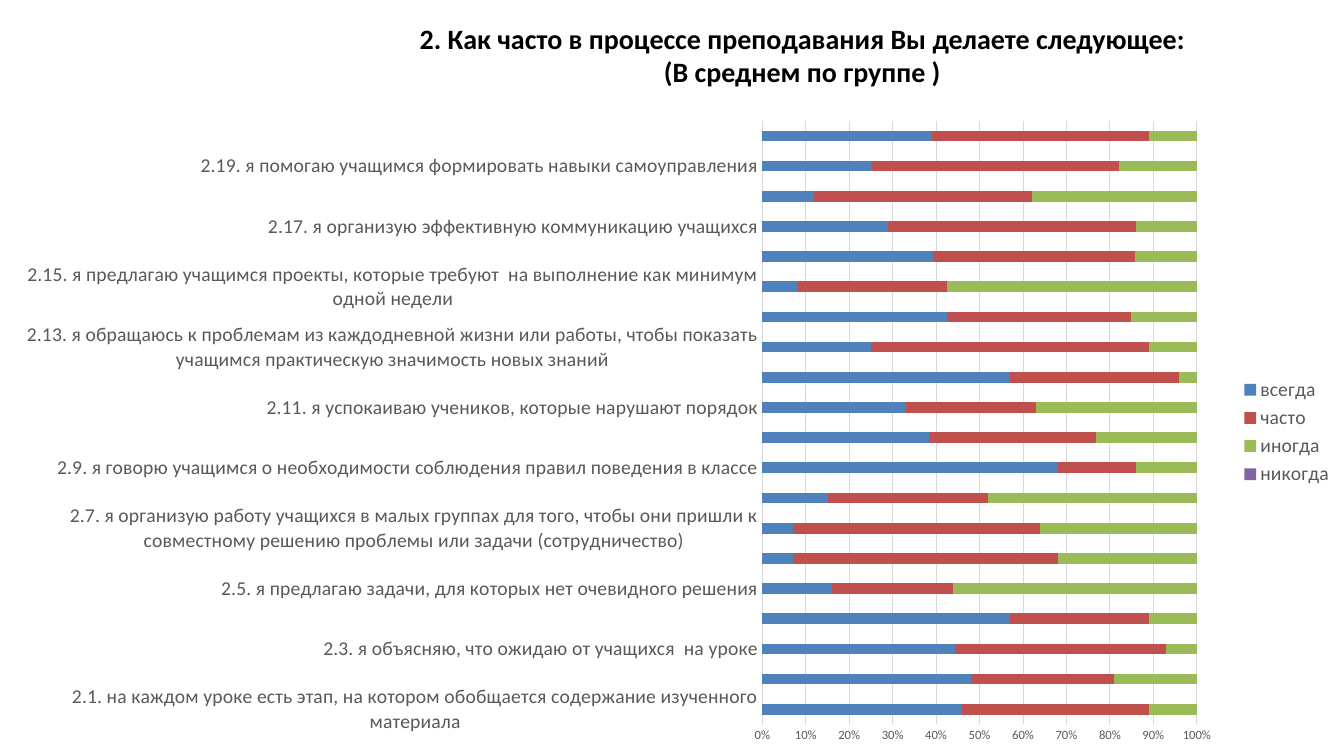
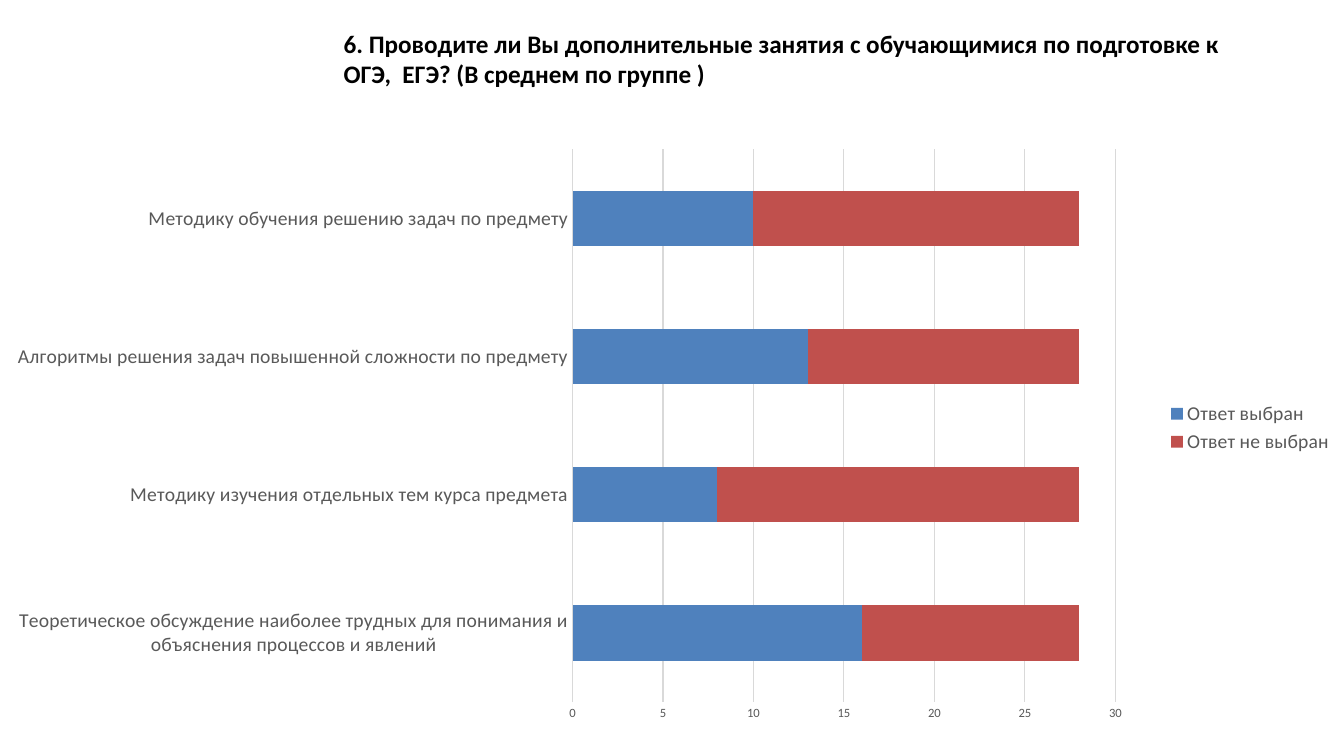
from pptx import Presentation
from pptx.chart.data import CategoryChartData
from pptx.dml.color import RGBColor
from pptx.enum.chart import XL_CHART_TYPE, XL_LEGEND_POSITION, XL_TICK_MARK
from pptx.enum.text import MSO_AUTO_SIZE, PP_ALIGN
from pptx.oxml import parse_xml
from pptx.oxml.ns import nsdecls, qn
from pptx.util import Cm, Pt

FONT = "Calibri"
COLOURS = {"title": "000000", "label": "595959", "grid": "D9D9D9"}
SERIES_COLOURS = ["4F81BD", "C0504D", "9BBB59", "8064A2"]
SLIDE_WIDTH, SLIDE_HEIGHT = 33.87, 19.05
TITLE_LEFT = 8.41

FREQUENCY_ROWS = [
    ("2.1. на каждом уроке есть этап, на котором обобщается содержание изученного материала", 46, 43, 11, 0),
    ("", 48, 33, 19, 0),
    ("2.3. я объясняю, что ожидаю от учащихся  на уроке", 44, 48, 7, 0),
    ("", 57, 32, 11, 0),
    ("2.5. я предлагаю задачи, для которых нет очевидного решения", 16, 28, 56, 0),
    ("", 7, 61, 32, 0),
    ("2.7. я организую работу учащихся в малых группах для того, чтобы они пришли к "
     "совместному решению проблемы или задачи (сотрудничество)", 7, 57, 36, 0),
    ("", 15, 37, 48, 0),
    ("2.9. я говорю учащимся о необходимости соблюдения правил поведения в классе", 68, 18, 14, 0),
    ("", 38, 38, 23, 0),
    ("2.11. я успокаиваю учеников, которые нарушают порядок", 33, 30, 37, 0),
    ("", 57, 39, 4, 0),
    ("2.13. я обращаюсь к проблемам из каждодневной жизни или работы, чтобы показать "
     "учащимся практическую значимость новых знаний", 25, 64, 11, 0),
    ("", 42, 42, 15, 0),
    ("2.15. я предлагаю учащимся проекты, которые требуют  на выполнение как минимум "
     "одной недели", 8, 35, 58, 0),
    ("", 39, 46, 14, 0),
    ("2.17. я организую эффективную коммуникацию учащихся", 29, 57, 14, 0),
    ("", 12, 50, 38, 0),
    ("2.19. я помогаю учащимся формировать навыки самоуправления", 25, 57, 18, 0),
    ("", 39, 50, 11, 0),
]

EXAM_ROWS = [
    ("Теоретическое обсуждение наиболее трудных для понимания и объяснения процессов и явлений", 16, 12),
    ("Методику изучения отдельных тем курса предмета", 8, 20),
    ("Алгоритмы решения задач повышенной сложности по предмету", 13, 15),
    ("Методику обучения решению задач по предмету", 10, 18),
]

SLIDES = [
    {
        "title": "2. Как часто в процессе преподавания Вы делаете следующее:\n(В среднем по группе )",
        "title_box": (0.41, 23.62, 1.96),
        "title_size": 20,
        "alignment": PP_ALIGN.CENTER,
        "chart_top": 2.72,
        "chart_type": XL_CHART_TYPE.BAR_STACKED_100,
        "series": ["всегда", "часто", "иногда", "никогда"],
        "rows": FREQUENCY_ROWS,
        "gap": 182,
        "axis_format": "0%",
        "plot": None,
    },
    {
        "title": "6. Проводите ли Вы дополнительные занятия с обучающимися по подготовке к ОГЭ,  ЕГЭ? "
                 "(В среднем по группе )",
        "title_box": (0.58, 22.63, 2.64),
        "title_size": 18,
        "alignment": PP_ALIGN.LEFT,
        "chart_top": 2.51,
        "chart_type": XL_CHART_TYPE.BAR_STACKED,
        "series": ["Ответ выбран", "Ответ не выбран"],
        "rows": EXAM_ROWS,
        "gap": 150,
        "axis_format": "General",
        "plot": {"x": 0.426, "y": 0.076, "w": 0.404, "h": 0.842},
    },
]


def style_font(font, size, colour, bold=False):
    font.name = FONT
    font.size = Pt(size)
    font.bold = bold
    font.color.rgb = RGBColor.from_string(COLOURS[colour])


def style_line(line):
    line.color.rgb = RGBColor.from_string(COLOURS["grid"])
    line.width = Pt(0.75)


def add_title(slide, content):
    top, width, height = content["title_box"]
    shape = slide.shapes.add_textbox(Cm(TITLE_LEFT), Cm(top), Cm(width), Cm(height))
    text_frame = shape.text_frame
    text_frame.word_wrap = True
    text_frame.auto_size = MSO_AUTO_SIZE.SHAPE_TO_FIT_TEXT
    text_frame.text = content["title"]
    for paragraph in text_frame.paragraphs:
        paragraph.alignment = content["alignment"]
        for run in paragraph.runs:
            style_font(run.font, content["title_size"], "title", True)


def place_plot(chart, plot):
    plot_area = chart.plots[0]._element.getparent()
    for layout in plot_area.findall(qn("c:layout")):
        plot_area.remove(layout)
    sizes = "".join(f'<c:{name} val="{value}"/>' for name, value in plot.items())
    plot_area.insert(0, parse_xml(
        f'<c:layout {nsdecls("c")}><c:manualLayout><c:layoutTarget val="inner"/>'
        f'<c:xMode val="edge"/><c:yMode val="edge"/>{sizes}</c:manualLayout></c:layout>'
    ))


def add_bar_chart(slide, content):
    labels, *columns = zip(*content["rows"])
    chart_data = CategoryChartData()
    chart_data.categories = labels
    for name, values in zip(content["series"], columns):
        chart_data.add_series(name, values)
    top = content["chart_top"]
    chart = slide.shapes.add_chart(
        content["chart_type"], Cm(0), Cm(top), Cm(SLIDE_WIDTH), Cm(SLIDE_HEIGHT - top), chart_data
    ).chart
    style_font(chart.font, 10, "title")
    chart.has_title = False

    bars = chart.plots[0]
    bars.gap_width = content["gap"]
    bars.overlap = 100
    bars.vary_by_categories = False
    for series, colour in zip(bars.series, SERIES_COLOURS):
        series.format.fill.solid()
        series.format.fill.fore_color.rgb = RGBColor.from_string(colour)

    for axis, size in ((chart.category_axis, 14), (chart.value_axis, 9)):
        axis.major_tick_mark = XL_TICK_MARK.NONE
        axis.minor_tick_mark = XL_TICK_MARK.NONE
        style_font(axis.tick_labels.font, size, "label")
    style_line(chart.category_axis.format.line)
    value_axis = chart.value_axis
    value_axis.has_major_gridlines = True
    style_line(value_axis.major_gridlines.format.line)
    value_axis.format.line.fill.background()
    value_axis.tick_labels.number_format = content["axis_format"]
    value_axis.tick_labels.number_format_is_linked = False

    chart.has_legend = True
    chart.legend.position = XL_LEGEND_POSITION.RIGHT
    chart.legend.include_in_layout = False
    style_font(chart.legend.font, 14, "label")
    if content["plot"]:
        place_plot(chart, content["plot"])


def main():
    presentation = Presentation()
    presentation.slide_width = Cm(SLIDE_WIDTH)
    presentation.slide_height = Cm(SLIDE_HEIGHT)
    for content in SLIDES:
        slide = presentation.slides.add_slide(presentation.slide_layouts[6])
        add_title(slide, content)
        add_bar_chart(slide, content)
    presentation.save("out.pptx")


if __name__ == "__main__":
    main()
